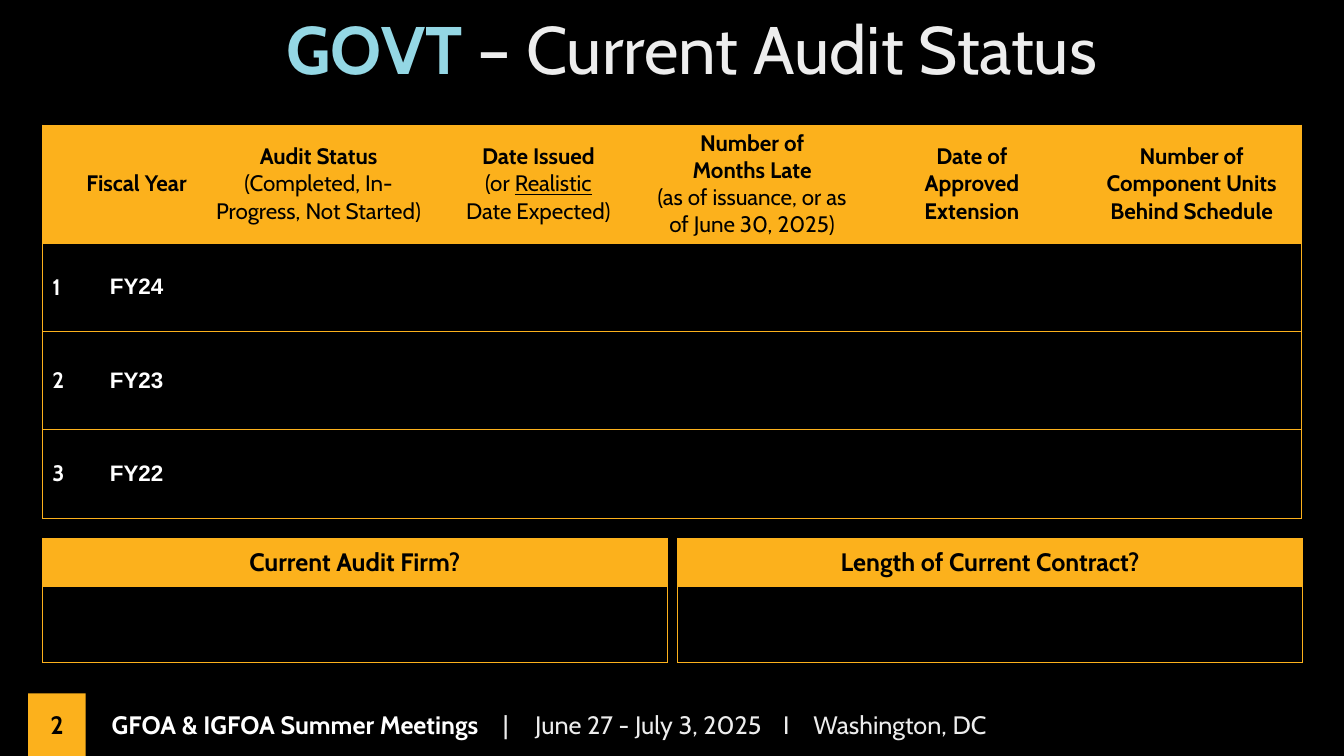
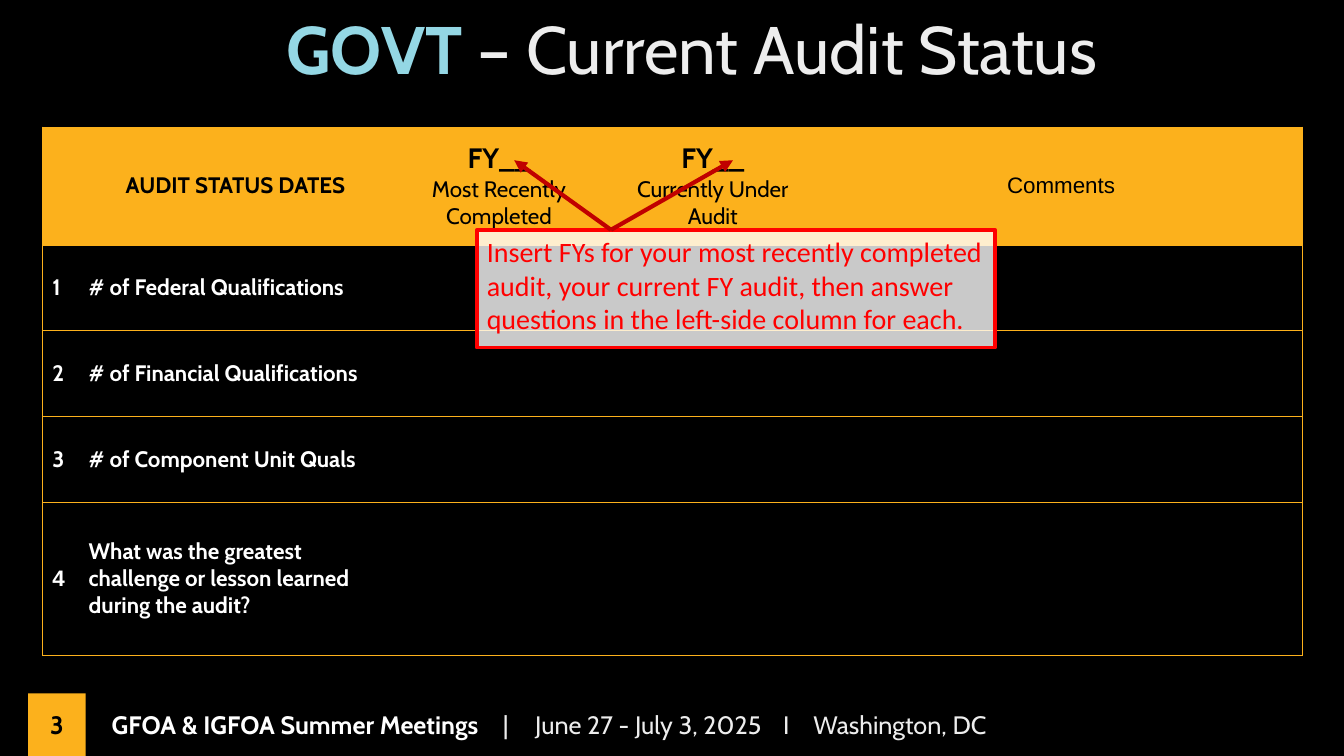
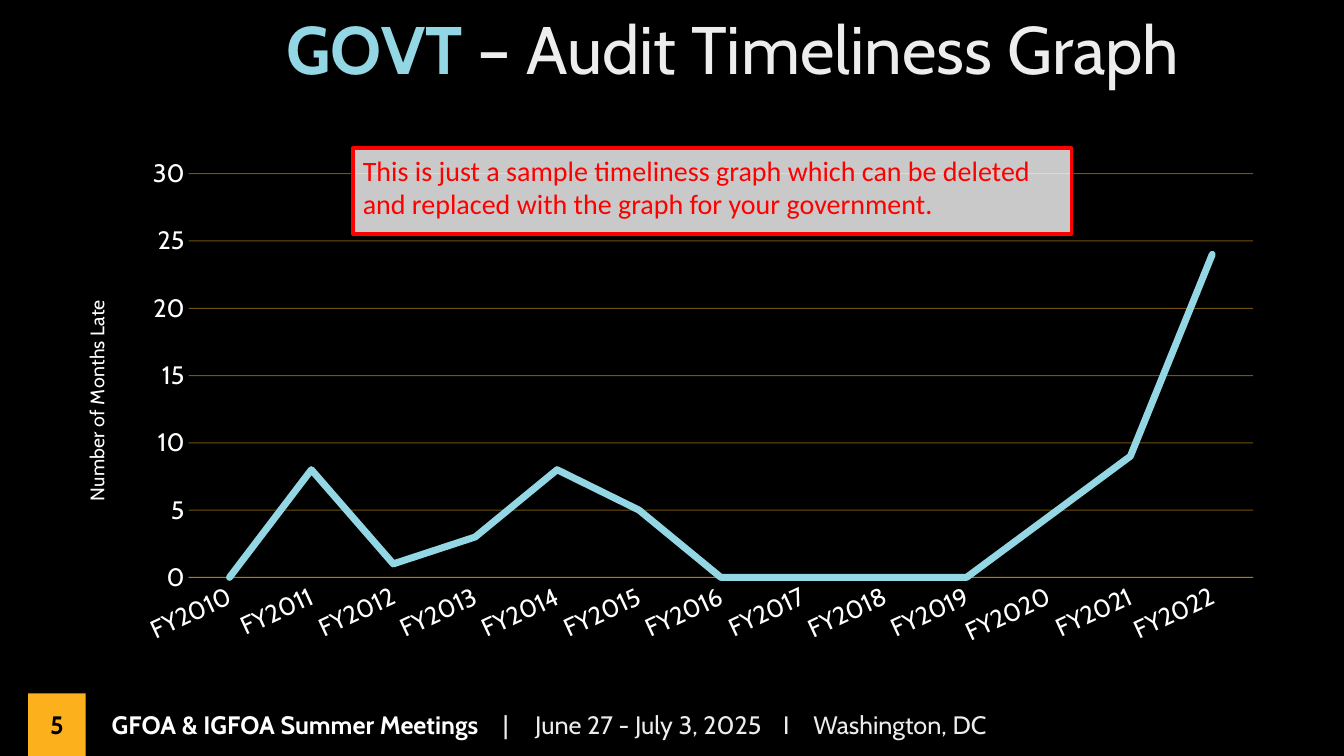
from lxml import etree
from pptx import Presentation
from pptx import util as u
from pptx.chart.data import CategoryChartData
from pptx.dml.color import RGBColor
from pptx.enum import chart as charts
from pptx.enum import shapes, text
from pptx.oxml.ns import qn

COLORS = {
    "black": "000000",
    "white": "FFFFFF",
    "silver": "EDEDED",
    "gold": "FCB11C",
    "grid": "E4A623",
    "sky": "94D7E4",
    "red": "FF0000",
    "dark_red": "C00000",
}
NO_STYLE_TABLE = "{2D5ABB26-0587-4C30-8999-92F81FD0307C}"
ARIAL = {"name": "Arial"}
PLAIN = {"bold": False}
LEFT = 0.42


def rgb(name):
    return RGBColor.from_string(COLORS[name])


def set_font(font, color=None, **settings):
    if color:
        font.color.rgb = rgb(color)
    for name, value in settings.items():
        setattr(font, name, u.Pt(value) if name == "size" else value)


def set_alpha(element, color, percent):
    """Make every use of a colour inside the element partly transparent."""
    for node in element.iter(qn("a:srgbClr")):
        if node.get("val") == COLORS[color]:
            etree.SubElement(node, qn("a:alpha"), val=str(percent * 1000))


def set_layout(parent, index, target=None, **edges):
    """Place a chart part by fractions of the chart's size."""
    for old in parent.findall(qn("c:layout")):
        parent.remove(old)
    layout = etree.Element(qn("c:layout"))
    parent.insert(index, layout)
    manual = etree.SubElement(layout, qn("c:manualLayout"))
    if target:
        etree.SubElement(manual, qn("c:layoutTarget"), val=target)
    for edge in ("x", "y"):
        etree.SubElement(manual, qn(f"c:{edge}Mode"), val="edge")
    for edge, value in edges.items():
        etree.SubElement(manual, qn(f"c:{edge}"), val=str(value))


def set_borders(cell, sides):
    properties = cell._tc.get_or_add_tcPr()
    for index, side in enumerate(sides):
        line = etree.Element(qn(f"a:ln{side}"), w=str(u.Pt(0.5)))
        fill = etree.SubElement(line, qn("a:solidFill"))
        etree.SubElement(fill, qn("a:srgbClr"), val=COLORS["gold"])
        properties.insert(index, line)


class Deck:
    def __init__(self):
        self.presentation = Presentation()
        self.presentation.slide_width = u.Inches(13.33)
        self.presentation.slide_height = u.Inches(7.5)
        self.slide = None

    def add_slide(self, number, title):
        layout = self.presentation.slide_layouts[6]
        self.slide = self.presentation.slides.add_slide(layout)
        fill = self.slide.background.fill
        fill.solid()
        fill.fore_color.rgb = rgb("black")
        badge = self.rectangle(0.28, 6.88, 0.57, 0.62, "gold")
        badge.text_frame.vertical_anchor = text.MSO_ANCHOR.MIDDLE
        self.put_text(badge.text_frame, [(str(number), {})], centered=True,
                      size=18, color="black", bold=True)
        heading = self.textbox(2.74, 0.02, 10.6, 1.01, [
            ("GOVT ", {"bold": True, "color": "sky"}), (f"– {title}", {})],
            size=48, color="silver")
        heading.line_spacing = 0.9
        self.textbox(1.01, 6.99, 9.2, 0.4, [
            ("GFOA & IGFOA Summer Meetings", {"bold": True, "color": "white"}),
            ("\t|\tJune 27 - July 3, 2025\tI\tWashington, DC", {})],
            tabs=(3.88, 4.2, 6.66, 6.96), size=18, color="silver")

    def put_text(self, frame, runs, centered=False, tabs=(), **font):
        """Fill the first paragraph with (text, font settings) runs."""
        paragraph = frame.paragraphs[0]
        if tabs:
            stops = etree.SubElement(paragraph._p.get_or_add_pPr(), qn("a:tabLst"))
            for stop in tabs:
                etree.SubElement(stops, qn("a:tab"), pos=str(u.Inches(stop)), algn="l")
        paragraph.alignment = text.PP_ALIGN.CENTER if centered else text.PP_ALIGN.LEFT
        set_font(paragraph.font, **{"name": "Cabin", **font})
        for words, settings in runs:
            for index, line in enumerate(words.split("\n")):
                if index:
                    paragraph.add_line_break()
                if line:
                    run = paragraph.add_run()
                    run.text = line
                    set_font(run.font, **settings)
        return paragraph

    def textbox(self, left, top, width, height, runs, **options):
        box = self.slide.shapes.add_textbox(
            u.Inches(left), u.Inches(top), u.Inches(width), u.Inches(height))
        box.text_frame.word_wrap = True
        box.text_frame.vertical_anchor = text.MSO_ANCHOR.MIDDLE
        return self.put_text(box.text_frame, runs, **options)

    def rectangle(self, left, top, width, height, fill):
        shape = self.slide.shapes.add_shape(
            shapes.MSO_SHAPE.RECTANGLE, u.Inches(left), u.Inches(top),
            u.Inches(width), u.Inches(height))
        shape.shadow.inherit = False
        shape.fill.solid()
        shape.fill.fore_color.rgb = rgb(fill)
        shape.line.fill.background()
        return shape

    def callout(self, left, top, width, height, words):
        shape = self.rectangle(left, top, width, height, "white")
        set_alpha(shape.element.spPr, "white", 79)
        shape.line.color.rgb = rgb("red")
        shape.line.width = u.Pt(2.5)
        shape.text_frame.word_wrap = True
        shape.text_frame.vertical_anchor = text.MSO_ANCHOR.TOP
        self.put_text(shape.text_frame, [(words, {})], name="Calibri", size=20, color="red")

    def arrow(self, start, end):
        points = [u.Inches(value) for value in (*start, *end)]
        connector = self.slide.shapes.add_connector(shapes.MSO_CONNECTOR.STRAIGHT, *points)
        connector.line.color.rgb = rgb("dark_red")
        connector.line.width = u.Pt(3)
        properties = connector.element.spPr
        etree.SubElement(properties.find(qn("a:ln")), qn("a:tailEnd"), type="triangle")
        etree.SubElement(properties, qn("a:effectLst"))

    def table(self, left, top, widths, heights, rows, size=16, centered=False):
        """Add a gold-headed table; each cell is a list of runs."""
        frame = self.slide.shapes.add_table(
            len(heights), len(widths), u.Inches(left), u.Inches(top),
            u.Inches(sum(widths)), u.Inches(sum(heights)))
        table = frame.table
        table.first_row = table.horz_banding = False
        for style in frame.element.iter(qn("a:tableStyleId")):
            style.text = NO_STYLE_TABLE
        for column, width in zip(table.columns, widths):
            column.width = u.Inches(width)
        for row, height in zip(table.rows, heights):
            row.height = u.Inches(height)
        last = len(widths) - 1
        for row_index, row in enumerate(rows):
            header = row_index == 0
            for index, cell in enumerate(table.rows[row_index].cells):
                if header:
                    cell.fill.solid()
                    cell.fill.fore_color.rgb = rgb("gold")
                else:
                    cell.fill.background()
                set_borders(cell, "L" * (index == 0) + "R" * (index == last) + "TB")
                cell.vertical_anchor = text.MSO_ANCHOR.MIDDLE
                if index < len(row):
                    self.put_text(cell.text_frame, row[index], size=size, bold=True,
                                  centered=header or (centered and index > 0),
                                  color="black" if header else "white")

    def line_chart(self, left, top, width, height, axis_title, categories, values):
        data = CategoryChartData()
        data.categories = categories
        data.add_series("Series 1", values)
        chart = self.slide.shapes.add_chart(
            charts.XL_CHART_TYPE.LINE_STACKED, u.Inches(left), u.Inches(top),
            u.Inches(width), u.Inches(height), data).chart
        chart.has_title = chart.has_legend = False
        set_font(chart.font, name="Cabin", size=10, color="white")
        plot = chart.plots[0]
        plot.vary_by_categories = False
        series = plot.series[0]
        series.smooth = False
        series.marker.style = charts.XL_MARKER_STYLE.NONE
        series.format.line.color.rgb = rgb("sky")
        series.format.line.width = u.Pt(5)
        for line in chart.element.iter(qn("a:ln")):
            line.set("cap", "rnd")

        category_axis, value_axis = chart.category_axis, chart.value_axis
        for axis in (category_axis, value_axis):
            axis.major_tick_mark = axis.minor_tick_mark = charts.XL_TICK_MARK.NONE
            set_font(axis.tick_labels.font, name="Cabin", size=18, color="white")
        category_axis.format.line.color.rgb = rgb("grid")
        category_axis.format.line.width = u.Pt(0.75)
        for body in category_axis._element.iter(qn("a:bodyPr")):
            body.set("rot", str(-25 * 60000))
        value_axis.minimum_scale, value_axis.maximum_scale = 0, 30
        value_axis.major_unit = 5
        value_axis.format.line.fill.background()
        gridline = value_axis.major_gridlines.format.line
        gridline.color.rgb = rgb("grid")
        gridline.width = u.Pt(0.75)
        set_alpha(chart.element, "grid", 50)

        title_frame = value_axis.axis_title.text_frame
        self.put_text(title_frame, [(axis_title, {})], centered=True,
                      size=14, bold=False, color="white")
        for title in chart.element.iter(qn("c:title")):
            for body in title.iter(qn("a:bodyPr")):
                body.set("rot", str(-90 * 60000))
                body.set("vert", "horz")
            set_layout(title, 1, x=0.01, y=0.29)
        for area in chart.element.iter(qn("c:plotArea")):
            set_layout(area, 0, "inner", x=0.1, y=0.05, w=0.88, h=0.79)


def main():
    deck = Deck()

    deck.add_slide(2, "Current Audit Status")
    header = [
        [],
        [("Fiscal Year", {})],
        [("Audit Status\n", {}), ("(Completed, In-Progress, Not Started)", PLAIN)],
        [("Date Issued\n", {}), ("(or ", PLAIN),
         ("Realistic", {"bold": False, "underline": True}), ("\nDate Expected)", PLAIN)],
        [("Number of\nMonths Late\n", {}),
         ("(as of issuance, or as of June 30, 2025)", PLAIN)],
        [("Date of\nApproved\nExtension", {})],
        [("Number of Component Units Behind Schedule", {})],
    ]
    years = [[[(str(number), {})], [(year, ARIAL)]]
             for number, year in enumerate(("FY24", "FY23", "FY22"), 1)]
    deck.table(LEFT, 1.24, [0.28, 1.31, 2.3, 2.06, 2.18, 2.18, 2.18],
               [1.17, 0.88, 0.97, 0.88], [header, *years], centered=True)
    for index, question in enumerate(("Current Audit Firm?", "Length of Current Contract?")):
        deck.table(LEFT + index * 6.3, 5.34, [6.2], [0.48, 0.75],
                   [[[(question, {})]], []], size=18)

    deck.add_slide(3, "Current Audit Status")
    header = [[], [("AUDIT STATUS DATES", {})]]
    for words in ("Most Recently\nCompleted", "Currently Under\nAudit"):
        header.append([("FY__\n", {"size": 20}), (words, PLAIN)])
    header.append([("Comments", {**ARIAL, **PLAIN})])
    questions = [
        [[("1", {})], [("# of Federal Qualifications", {})]],
        [[("2", {})], [("# of Financial Qualifications", {})]],
        [[("3", {})], [("# of Component Unit Quals", {})]],
        [[("4", ARIAL)],
         [("What was the greatest challenge or lesson learned during the audit?", {})]],
    ]
    deck.table(LEFT, 1.26, [0.36, 3.11, 2.12, 2.12, 4.79],
               [1.17, 0.85, 0.85, 0.85, 1.52], [header, *questions])
    deck.callout(4.73, 2.28, 5.14, 1.17,
                 "Insert FYs for your most recently completed audit, your current FY "
                 "audit, then answer questions in the left-side column for each.")
    for tip in (5.1, 7.27):
        deck.arrow((6.06, 2.28), (tip, 1.59))

    deck.add_slide(5, "Audit Timeliness Graph")
    deck.line_chart(0.67, 1.47, 12, 5.07, "Number of Months Late",
                    [f"FY{year}" for year in range(2010, 2023)],
                    [0, 8, 1, 3, 8, 5, 0, 0, 0, 0, 4.5, 9, 24])
    deck.callout(3.5, 1.47, 7.13, 0.85,
                 "This is just a sample timeliness graph which can be deleted and "
                 "replaced with the graph for your government.")

    deck.presentation.save("out.pptx")


if __name__ == "__main__":
    main()
